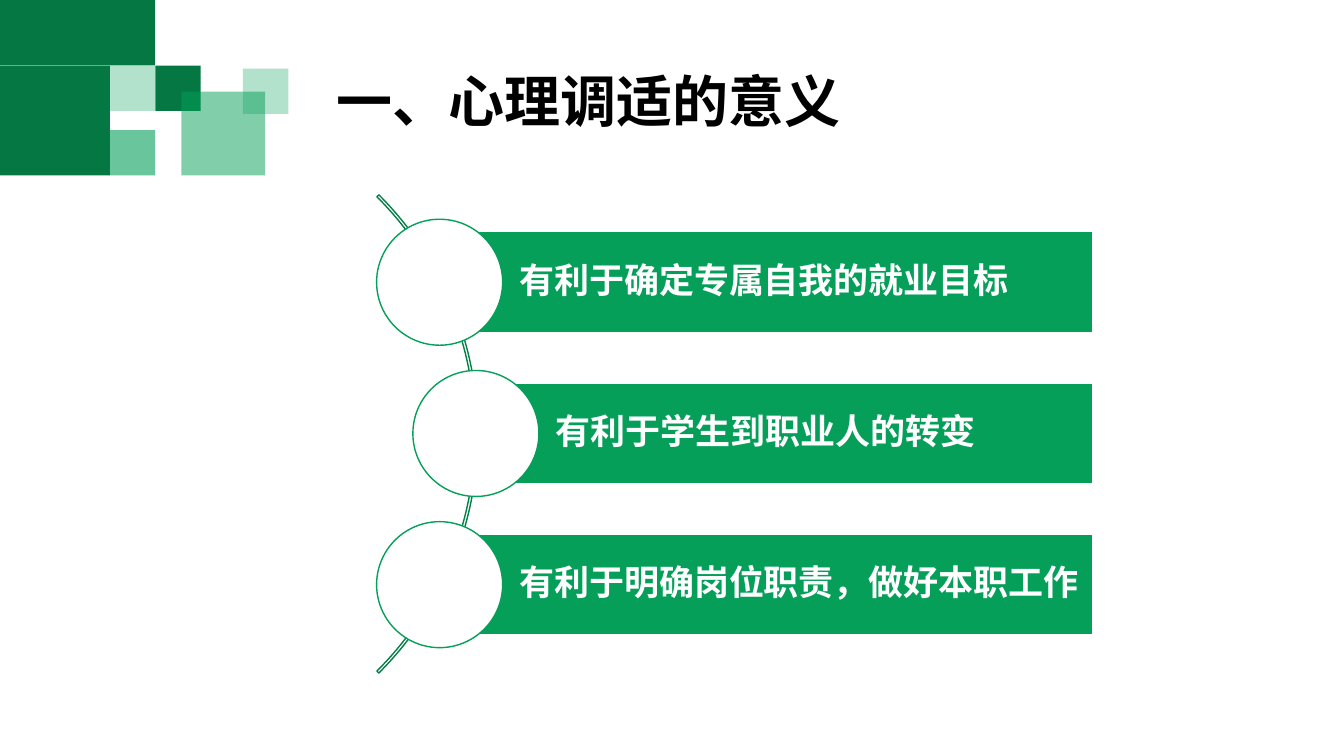
from pptx import Presentation
from pptx.dml.color import RGBColor
from pptx.enum.shapes import MSO_SHAPE
from pptx.enum.text import MSO_ANCHOR, MSO_AUTO_SIZE, PP_ALIGN
from pptx.oxml.ns import qn
from pptx.util import Inches, Pt
from lxml.etree import SubElement

DARK = RGBColor(0x04, 0x77, 0x43)
GREEN = RGBColor(0x05, 0x9F, 0x59)
EDGE = RGBColor(0x04, 0x7F, 0x47)
WHITE = RGBColor(0xFF, 0xFF, 0xFF)
BLACK = RGBColor(0x00, 0x00, 0x00)
FONT = "Calibri"

TITLE = "一、心理调适的意义"
POINTS = [
    "有利于确定专属自我的就业目标",
    "有利于学生到职业人的转变",
    "有利于明确岗位职责，做好本职工作",
]

# Corner squares: left, top, width, height, colour, opacity in percent
SQUARES = [
    (0, 0.65, 1.09, 1.09, DARK, 100),
    (0, 0, 1.54, 0.65, DARK, 100),
    (1.09, 0.65, 0.45, 0.45, GREEN, 30),
    (1.54, 0.65, 0.45, 0.45, DARK, 100),
    (1.09, 1.29, 0.45, 0.45, GREEN, 60),
    (1.8, 0.91, 0.83, 0.83, GREEN, 50),
    (2.41, 0.68, 0.45, 0.45, GREEN, 30),
]

# Bars and circles
MID = 4.3      # centre line of the list
STEP = 1.5     # distance between rows
RIGHT = 10.84  # shared right edge of the bars
BAR = 1.0      # bar height
DISC = 1.25    # circle diameter


def add_text(frame, text, size=25, color=WHITE, before=0):
    frame.word_wrap = True
    para = frame.paragraphs[0]
    para.alignment = PP_ALIGN.LEFT
    para.line_spacing = 0.9
    para.space_before = Pt(before)
    run = para.add_run()
    run.text = text
    run.font.name = FONT
    run.font.size = Pt(size)
    run.font.bold = True
    run.font.color.rgb = color


def add_form(slide, kind, box, fill=None, line=None, alpha=100):
    form = slide.shapes.add_shape(kind, *map(Inches, box))
    form.shadow.inherit = False
    if fill is None:
        form.fill.background()
    else:
        form.fill.solid()
        form.fill.fore_color.rgb = fill
        if alpha < 100:
            tone = form._element.spPr.find(".//" + qn("a:srgbClr"))
            SubElement(tone, qn("a:alpha")).set("val", str(alpha * 1000))
    if line is None:
        form.line.fill.background()
    else:
        form.line.color.rgb = line
        form.line.width = Pt(1)
    return form


def add_title(slide):
    title = slide.shapes.title
    title.left, title.top = Inches(3.24), Inches(0.69)
    title.width, title.height = Inches(5.98), Inches(1.45)
    frame = title.text_frame
    frame.auto_size = MSO_AUTO_SIZE.NONE
    frame.vertical_anchor = MSO_ANCHOR.TOP
    add_text(frame, TITLE, size=40, color=BLACK, before=10)


def add_arc(slide):
    arc = add_form(slide, MSO_SHAPE.BLOCK_ARC, (-1.97, 0.95, 6.71, 6.71), line=EDGE)
    # Start angle, end angle, thickness
    for i, value in enumerate((189, 27, 0.004)):
        arc.adjustments[i] = value


def add_point(slide, text, left, mid):
    box = (left, mid - BAR / 2, RIGHT - left, BAR)
    bar = add_form(slide, MSO_SHAPE.RECTANGLE, box, GREEN, WHITE)
    frame = bar.text_frame
    frame.vertical_anchor = MSO_ANCHOR.MIDDLE
    frame.margin_left = Inches(0.79)
    frame.margin_right = frame.margin_top = frame.margin_bottom = Inches(0.07)
    add_text(frame, text)
    disc = (left - DISC / 2, mid - DISC / 2, DISC, DISC)
    add_form(slide, MSO_SHAPE.OVAL, disc, WHITE, GREEN)


def main():
    deck = Presentation()
    deck.slide_width, deck.slide_height = Inches(13.33), Inches(7.5)
    slide = deck.slides.add_slide(deck.slide_layouts[5])

    # Corner pattern
    for *box, color, alpha in SQUARES:
        add_form(slide, MSO_SHAPE.RECTANGLE, box, color, alpha=alpha)

    add_title(slide)

    # Curved list
    add_arc(slide)
    for i, text in enumerate(POINTS):
        left = 4.72 if i == 1 else 4.36
        add_point(slide, text, left, MID + (i - 1) * STEP)

    deck.save("out.pptx")


if __name__ == "__main__":
    main()
